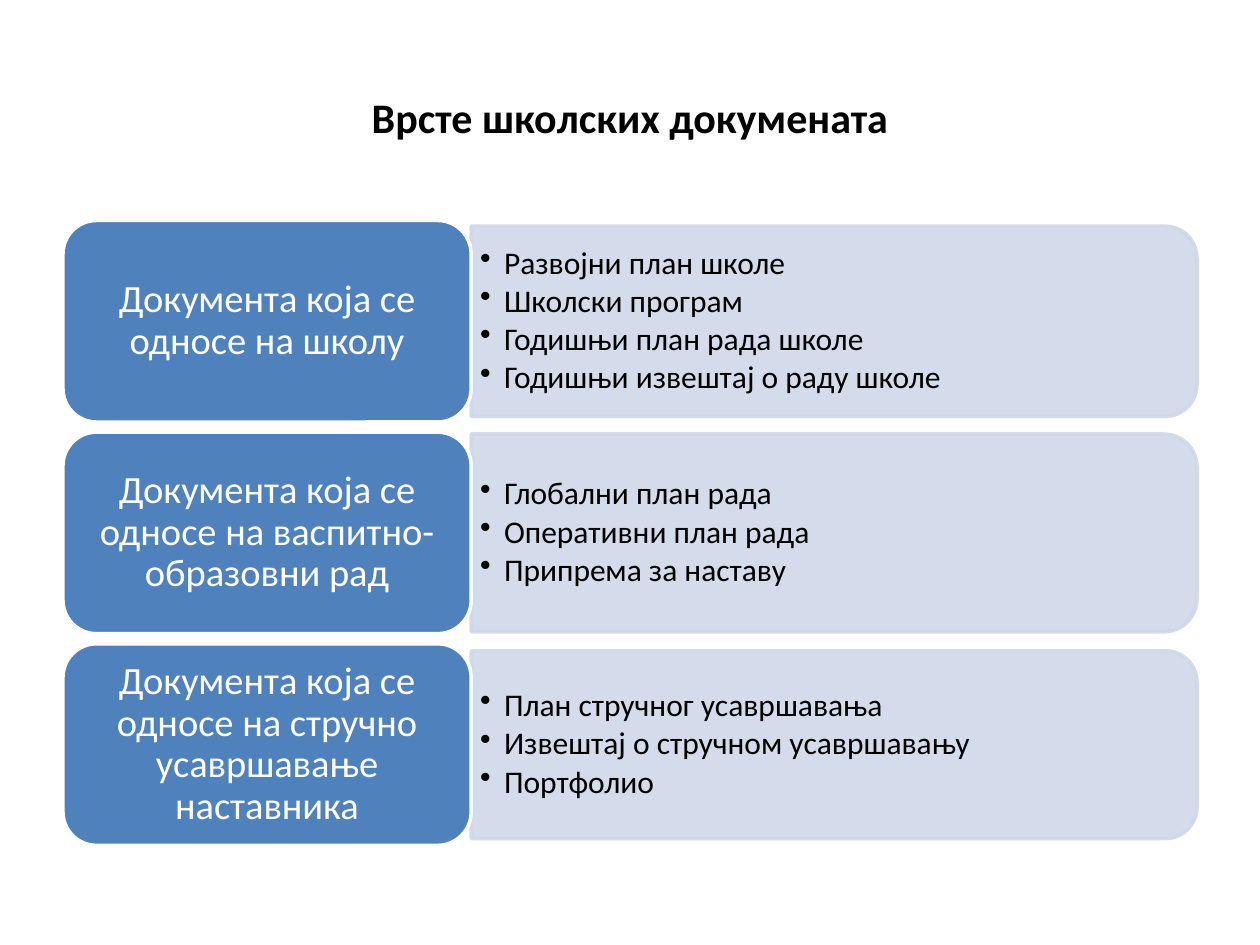
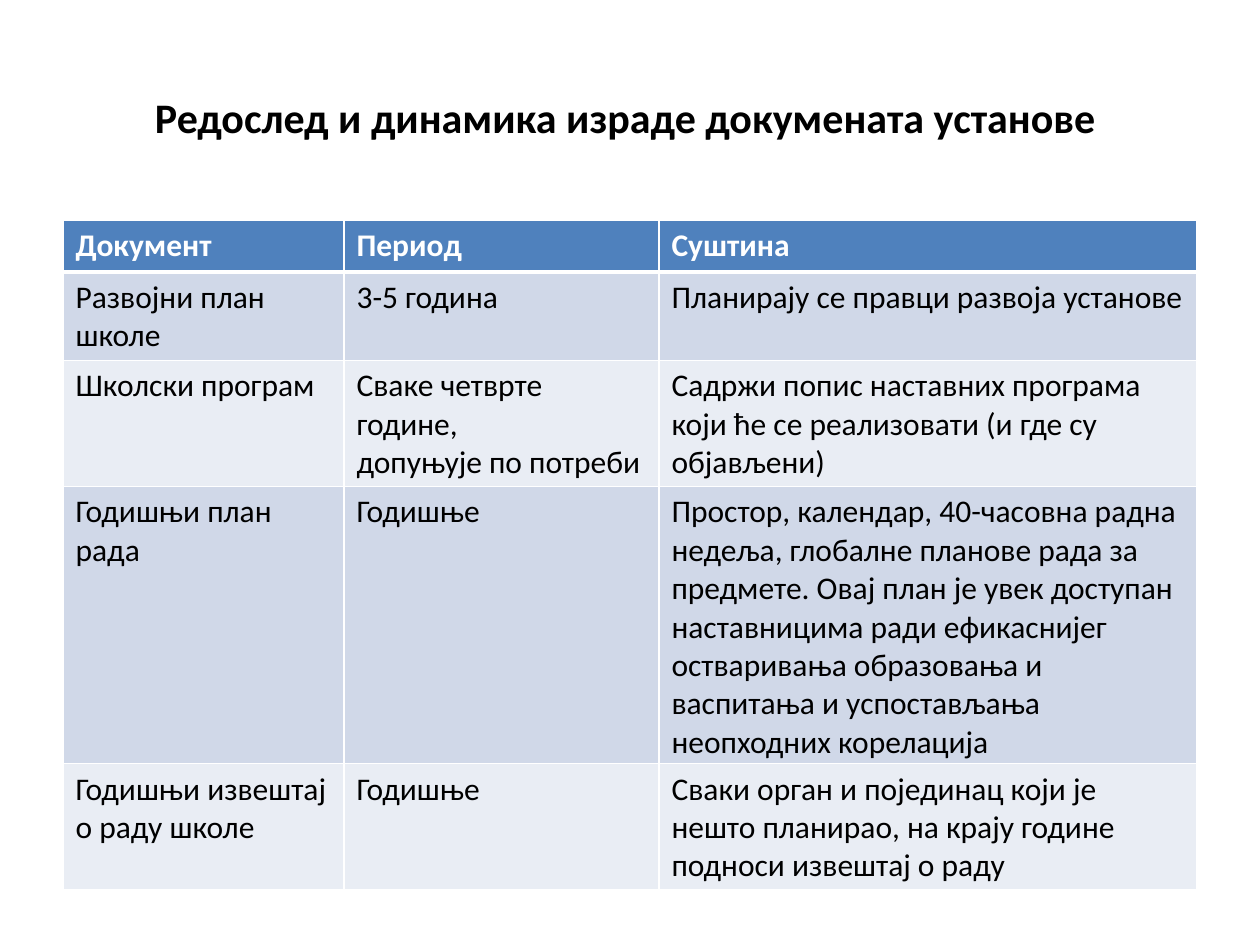
from lxml import etree
from pptx import Presentation
from pptx.dml.color import RGBColor
from pptx.enum.shapes import MSO_SHAPE
from pptx.enum.text import MSO_ANCHOR, PP_ALIGN
from pptx.oxml.ns import qn
from pptx.util import Emu, Inches, Pt

ROUND_RECT = MSO_SHAPE.ROUNDED_RECTANGLE
ROUND_TOP = MSO_SHAPE.ROUND_2_SAME_RECTANGLE
MIDDLE = MSO_ANCHOR.MIDDLE
CENTER = PP_ALIGN.CENTER

FONT = "Calibri"
BLACK, WHITE = "000000", "FFFFFF"
BLUE, PALE, PALER = "4F81BD", "D0D8E8", "E9EDF4"


def rgb(hex_color):
    return RGBColor.from_string(hex_color)


def add_run(p, text, size, color=BLACK, bold=False):
    r = p.add_run()
    r.text = text
    r.font.name, r.font.size, r.font.bold = FONT, Pt(size), bold
    r.font.color.rgb = rgb(color)


# Presentation and shared grid
prs = Presentation()
prs.slide_width, prs.slide_height = Inches(10), Inches(7.5)
MARGIN = prs.slide_width // 20
BODY_W = prs.slide_width - 2 * MARGIN
BODY_TOP = Inches(1.75)

# Slides with their titles
slides = []
for title in ["Врсте школских докумената",
              "Редослед и динамика израде докумената установе "]:
    s = prs.slides.add_slide(prs.slide_layouts[6])
    tf = s.shapes.add_textbox(MARGIN, Inches(0.3), BODY_W, Inches(1.25)).text_frame
    tf.word_wrap, tf.vertical_anchor = True, MIDDLE
    p = tf.paragraphs[0]
    p.alignment = CENTER
    add_run(p, title, 24, bold=True)
    slides.append(s)
types_slide, schedule_slide = slides

# Slide 1: document groups, a label and a panel in each row
groups = [
    ("Документа која се односе на школу", 1.51,
     ["Развојни план школе", "Школски програм", "Годишњи план рада школе",
      "Годишњи извештај о раду школе"]),
    ("Документа која се односе на васпитно-образовни рад", 1.57,
     ["Глобални план рада", "Оперативни план рада", "Припрема за наставу"]),
    ("Документа која се односе на стручно усавршавање наставника", 1.49,
     ["План стручног усавршавања", "Извештај о стручном усавршавању", "Портфолио"]),
]
LABEL_W, LABEL_H = int(BODY_W * 0.36), Inches(1.6)
ROW_STEP = LABEL_H + Inches(0.08)
PANEL_W = BODY_W - LABEL_W
panel_left = MARGIN + LABEL_W

for i, (label, panel_in, items) in enumerate(groups):
    top = BODY_TOP + i * ROW_STEP
    middle = top + LABEL_H // 2
    panel_h = Inches(panel_in)

    # Panel: turned a quarter so that its round corners face right
    sp = types_slide.shapes.add_shape(
        ROUND_TOP, panel_left + (PANEL_W - panel_h) // 2, middle - PANEL_W // 2,
        panel_h, PANEL_W)
    sp.rotation = 90
    sp.shadow.inherit = False
    sp.fill.solid()
    sp.fill.fore_color.rgb = rgb(PALE)
    sp.line.color.rgb = rgb(PALE)
    sp.line.width = Pt(2)
    for clr in sp._element.spPr.iter(qn("a:srgbClr")):
        etree.SubElement(clr, qn("a:alpha"), val="90000")

    # Bulleted items
    text_h = panel_h - Inches(0.15)
    tf = types_slide.shapes.add_textbox(
        panel_left, middle - text_h // 2, PANEL_W - Inches(0.07), text_h).text_frame
    tf.word_wrap, tf.vertical_anchor = True, MIDDLE
    tf.margin_left = tf.margin_right = Inches(0.07)
    tf.margin_top = tf.margin_bottom = Inches(0.04)
    for n, item in enumerate(items):
        p = tf.add_paragraph() if n else tf.paragraphs[0]
        p.line_spacing, p.space_after = 0.9, Pt(2.4)
        pPr = p._p.get_or_add_pPr()
        pPr.set("marL", str(Inches(0.19)))
        pPr.set("indent", str(-Inches(0.19)))
        etree.SubElement(pPr, qn("a:buChar"), char="•")
        add_run(p, item, 18)

    # Label
    sp = types_slide.shapes.add_shape(ROUND_RECT, MARGIN, top, LABEL_W, LABEL_H)
    sp.shadow.inherit = False
    sp.fill.solid()
    sp.fill.fore_color.rgb = rgb(BLUE)
    sp.line.color.rgb = rgb(WHITE)
    sp.line.width = Pt(2)
    tf = sp.text_frame
    tf.word_wrap, tf.vertical_anchor = True, MIDDLE
    tf.margin_left = tf.margin_right = Inches(0.09)
    tf.margin_top = tf.margin_bottom = Inches(0.05)
    p = tf.paragraphs[0]
    p.alignment, p.line_spacing = CENTER, 0.9
    add_run(p, label, 22, WHITE)

# Slide 2: schedule table
rows = [
    ["Документ", "Период", "Суштина"],
    ["Развојни план школе", "3-5 година", "Планирају се правци развоја установе"],
    ["Школски програм", "Сваке четврте године,\nдопуњује по потреби",
     "Садржи попис наставних програма који ће се реализовати (и где су објављени)"],
    ["Годишњи план рада", "Годишње",
     "Простор, календар, 40-часовна радна недеља, глобалне планове рада за предмете. "
     "Овај план је увек доступан наставницима ради ефикаснијег остваривања образовања "
     "и васпитања и успостављања неопходних корелација"],
    ["Годишњи извештај о раду школе", "Годишње",
     "Сваки орган и појединац који је нешто планирао, на крају године подноси "
     "извештај о раду"],
]
ROW_H = Inches(0.41)
table = schedule_slide.shapes.add_table(
    len(rows), 3, MARGIN, BODY_TOP, BODY_W, ROW_H * len(rows)).table
for col, width in zip(table.columns, [2.23, 2.5, 4.27]):
    col.width = Inches(width)

for i, row in enumerate(rows):
    header = i == 0
    table.rows[i].height = Emu(ROW_H)
    for j, text in enumerate(row):
        cell = table.cell(i, j)

        # White borders, thicker under the header
        tcPr = cell._tc.get_or_add_tcPr()
        for side in "LRTB":
            thick = (i, side) in [(0, "B"), (1, "T")]
            ln = etree.SubElement(tcPr, qn("a:ln" + side), w=str(Pt(3 if thick else 1)))
            fill = etree.SubElement(ln, qn("a:solidFill"))
            etree.SubElement(fill, qn("a:srgbClr"), val=WHITE)

        cell.fill.solid()
        cell.fill.fore_color.rgb = rgb(BLUE if header else PALE if i % 2 else PALER)
        tf = cell.text_frame
        for n, line in enumerate(text.split("\n")):
            p = tf.add_paragraph() if n else tf.paragraphs[0]
            add_run(p, line, 18, WHITE if header else BLACK, header)

prs.save("out.pptx")
